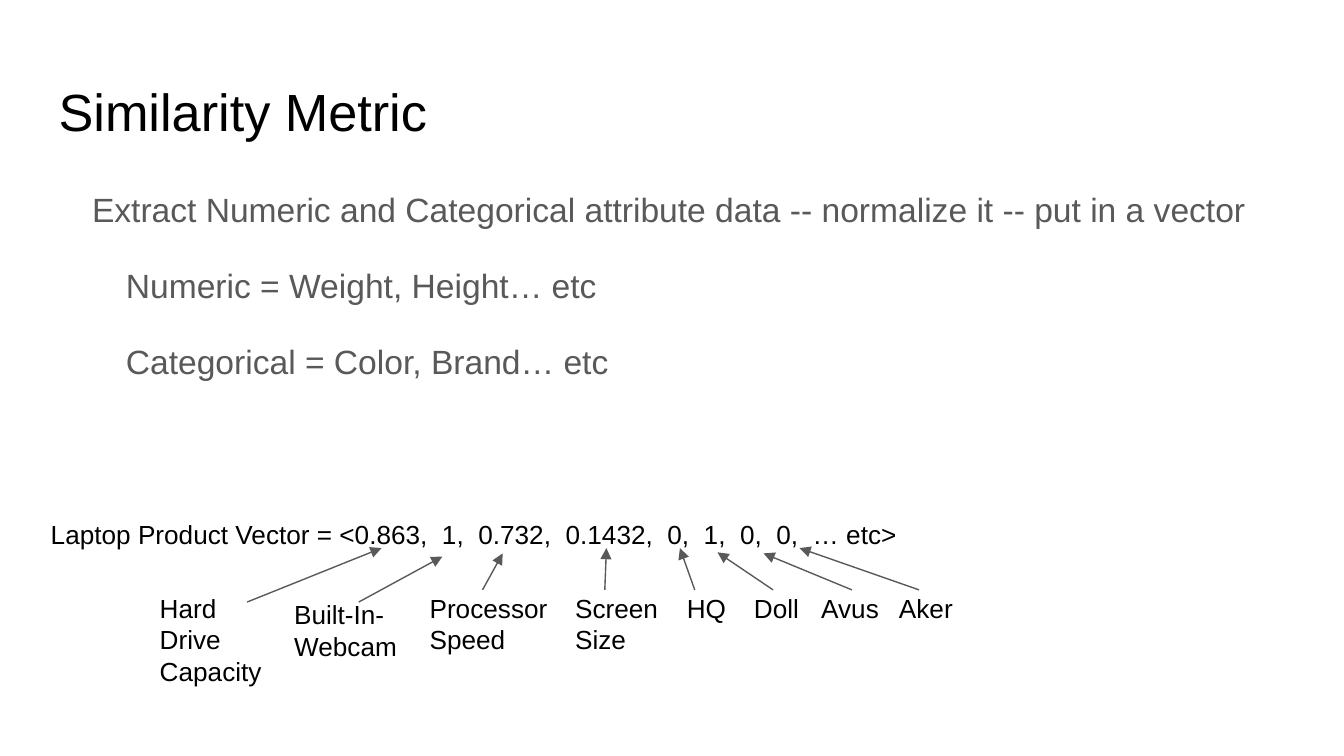
"""Build the similarity metric slide with its labelled product vector."""
from lxml.etree import SubElement
from pptx import Presentation
from pptx.dml.color import RGBColor
from pptx.enum.shapes import MSO_CONNECTOR as Link
from pptx.oxml.ns import qn
from pptx.util import Cm, Pt

BLACK = RGBColor(0x00, 0x00, 0x00)
GREY = RGBColor(0x59, 0x59, 0x59)
FONT = "Arial"
PAD = Cm(0.25)
WIDE = 23.67
ROW = 10.95
BASE = 11.15

TITLE = "Similarity Metric"
POINTS = [
    ("Extract Numeric and Categorical attribute data -- normalize it -- put in a vector", -0.64),
    ("Numeric = Weight, Height… etc", 0),
    ("Categorical = Color, Brand… etc", 0),
]
VECTOR = "Laptop Product Vector = <0.863,  1,  0.732,  0.1432,  0,  1,  0,  0,  … etc>"

# label, (left, top, width, height), arrow start, arrow tip
PARTS = [
    ("Hard Drive Capacity", (2.77, ROW, 2.54, 2.26), (4.67, 11.38), (7.21, 10.36)),
    ("Built-In-Webcam", (5.31, 11.07, 2.54, 2.26), (6.78, 11.38), (8.36, 10.52)),
    ("Processor Speed", (7.87, ROW, 2.97, 1.6), (9.12, BASE), (9.5, 10.46)),
    ("Screen Size", (10.62, ROW, 2.54, 2.26), (11.43, BASE), (11.46, 10.36)),
    ("HQ", (12.73, ROW, 1.32, 2.26), (13.13, BASE), (12.85, 10.36)),
    ("Doll", (14, ROW, 1.55, 1.4), (14.61, BASE), (13.56, 10.44)),
    ("Avus", (15.27, ROW, 1.73, 1.24), (16.1, BASE), (14.43, 10.46)),
    ("Aker", (16.74, ROW, 1.73, 1.24), (17.37, BASE), (15.11, 10.36)),
]


def add_text(slide, text, area, size, color=BLACK):
    box = slide.shapes.add_textbox(*map(Cm, area))
    frame = box.text_frame
    frame.word_wrap = True
    frame.margin_left = frame.margin_right = PAD
    frame.margin_top = frame.margin_bottom = PAD
    frame.text = text
    for para in frame.paragraphs:
        for run in para.runs:
            run.font.name = FONT
            run.font.size = Pt(size)
            run.font.color.rgb = color
    return frame


def add_arrow(slide, start, tip):
    line = slide.shapes.add_connector(Link.STRAIGHT, *map(Cm, start + tip))
    line.line.color.rgb = GREY
    line.line.width = Pt(0.75)
    SubElement(line.line._get_or_add_ln(), qn("a:tailEnd"), type="triangle")
    SubElement(line._element.spPr, qn("a:effectLst"))


def main():
    deck = Presentation()
    deck.slide_width, deck.slide_height = Cm(25.4), Cm(14.29)
    slide = deck.slides.add_slide(deck.slide_layouts[6])

    add_text(slide, TITLE, (0.86, 1.24, WIDE, 1.6), 28)
    text = "\n".join(point for point, _ in POINTS)
    body = add_text(slide, text, (0.86, 3.2, WIDE, 10.44), 18, GREY)
    for para, (_, shift) in zip(body.paragraphs, POINTS):
        para.line_spacing = 1.15
        para.space_after = Pt(16)
        props = para._p.get_or_add_pPr()
        props.set("marL", str(Cm(1.27)))
        props.set("indent", str(Cm(shift)))

    add_text(slide, VECTOR, (0.71, 9.55, WIDE, 1.4), 14)
    for label, area, _, _ in PARTS:
        add_text(slide, label, area, 14)
    for _, _, start, tip in PARTS:
        add_arrow(slide, start, tip)
    deck.save("out.pptx")


if __name__ == "__main__":
    main()
